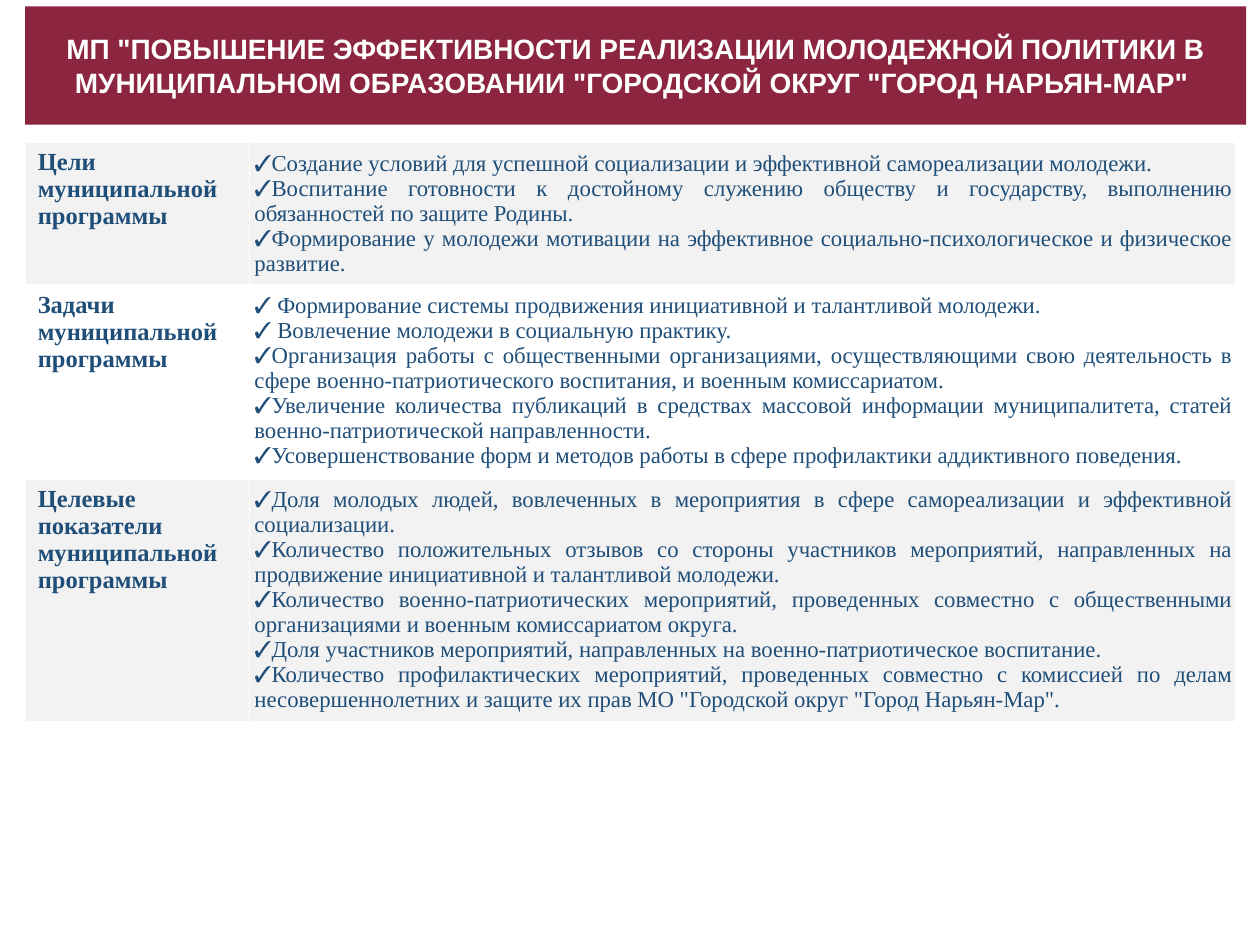
from lxml import etree
from pptx import Presentation
from pptx.dml.color import RGBColor
from pptx.enum.shapes import MSO_SHAPE
from pptx.enum.text import MSO_ANCHOR, PP_ALIGN
from pptx.oxml.ns import qn
from pptx.util import Inches, Pt

RECT = MSO_SHAPE.RECTANGLE
MIDDLE = MSO_ANCHOR.MIDDLE
CENTER, JUSTIFY = PP_ALIGN.CENTER, PP_ALIGN.JUSTIFY

WHITE = RGBColor(0xFF, 0xFF, 0xFF)
GREY = RGBColor(0xF2, 0xF2, 0xF2)
NAVY = RGBColor(0x1F, 0x4E, 0x79)
MAROON = RGBColor(0x8C, 0x25, 0x40)
SERIF = "Times New Roman"

TITLE = ('МП "ПОВЫШЕНИЕ ЭФФЕКТИВНОСТИ РЕАЛИЗАЦИИ МОЛОДЕЖНОЙ ПОЛИТИКИ В '
         'МУНИЦИПАЛЬНОМ ОБРАЗОВАНИИ "ГОРОДСКОЙ ОКРУГ "ГОРОД НАРЬЯН-МАР" ')
# heading, row height, bullet points
SECTIONS = [
    ("Цели муниципальной программы", 1.13, [
        "Создание условий для успешной социализации и эффективной самореализации молодежи.",
        "Воспитание готовности к достойному служению обществу и государству, "
        "выполнению обязанностей по защите Родины.",
        "Формирование у молодежи мотивации на эффективное "
        "социально-психологическое и физическое развитие.",
    ]),
    ("Задачи муниципальной программы", 1.54, [
        " Формирование системы продвижения инициативной и талантливой молодежи.",
        " Вовлечение молодежи в социальную практику.",
        "Организация работы с общественными организациями, осуществляющими свою "
        "деятельность в сфере военно-патриотического воспитания, и военным комиссариатом.",
        "Увеличение количества публикаций в средствах массовой информации "
        "муниципалитета, статей военно-патриотической направленности.",
        "Усовершенствование форм и методов работы в сфере профилактики аддиктивного поведения.",
    ]),
    ("Целевые показатели муниципальной программы", 1.92, [
        "Доля молодых людей, вовлеченных в мероприятия в сфере самореализации "
        "и эффективной социализации.",
        "Количество положительных отзывов со стороны участников мероприятий, "
        "направленных на продвижение инициативной и талантливой молодежи.",
        "Количество военно-патриотических мероприятий, проведенных совместно "
        "с общественными организациями и военным комиссариатом округа.",
        "Доля участников мероприятий, направленных на военно-патриотическое воспитание.",
        "Количество профилактических мероприятий, проведенных совместно с комиссией "
        'по делам несовершеннолетних и защите их прав МО "Городской округ "Город Нарьян-Мар".',
    ]),
]
COLUMNS = [1.78, 7.83]


def add_run(p, text, font, size, color, bold=False):
    r = p.add_run()
    r.text = text
    r.font.name, r.font.size, r.font.bold = font, Pt(size), bold
    r.font.color.rgb = color


def add_check_bullet(p):
    pPr = p._p.get_or_add_pPr()
    pPr.set("marL", "0")
    pPr.set("indent", "0")
    etree.SubElement(pPr, qn("a:buFont")).set("typeface", SERIF)
    etree.SubElement(pPr, qn("a:buChar")).set("char", "✓")


def style_cell(cell, color):
    """Give the cell white 1 pt borders and a solid fill."""
    tcPr = cell._tc.get_or_add_tcPr()
    for side in ("a:lnL", "a:lnR", "a:lnT", "a:lnB"):
        ln = etree.SubElement(tcPr, qn(side), w=str(Pt(1)))
        fill = etree.SubElement(ln, qn("a:solidFill"))
        etree.SubElement(fill, qn("a:srgbClr"), val=str(WHITE))
    cell.fill.solid()
    cell.fill.fore_color.rgb = color


prs = Presentation()
prs.slide_width, prs.slide_height = Inches(10), Inches(7.5)
s = prs.slides.add_slide(prs.slide_layouts[6])

table_height = sum(height for _, height, _ in SECTIONS)
table = s.shapes.add_table(len(SECTIONS), len(COLUMNS), Inches(0.2), Inches(1.13),
                           Inches(sum(COLUMNS)), Inches(table_height)).table
for column, width in zip(table.columns, COLUMNS):
    column.width = Inches(width)

for i, (heading, height, points) in enumerate(SECTIONS):
    table.rows[i].height = Inches(height)
    head, body = table.cell(i, 0), table.cell(i, 1)
    for cell in (head, body):
        style_cell(cell, WHITE if i % 2 else GREY)
    add_run(head.text_frame.paragraphs[0], heading, SERIF, 14, NAVY, True)

    body.margin_left = body.margin_right = Inches(0.04)
    body.margin_top = body.margin_bottom = Inches(0.07)
    tf = body.text_frame
    for j, point in enumerate(points):
        p = tf.add_paragraph() if j else tf.paragraphs[0]
        p.alignment = JUSTIFY
        add_check_bullet(p)
        add_run(p, point, SERIF, 13, NAVY)

banner = s.shapes.add_shape(RECT, Inches(0.2), Inches(0.05), Inches(9.69), Inches(0.94))
banner.shadow.inherit = False
banner.fill.solid()
banner.fill.fore_color.rgb = MAROON
banner.line.fill.background()
tf = banner.text_frame
tf.word_wrap = True
tf.vertical_anchor = MIDDLE
p = tf.paragraphs[0]
p.alignment = CENTER
add_run(p, TITLE, "Arial", 16, WHITE, True)

prs.save("out.pptx")
